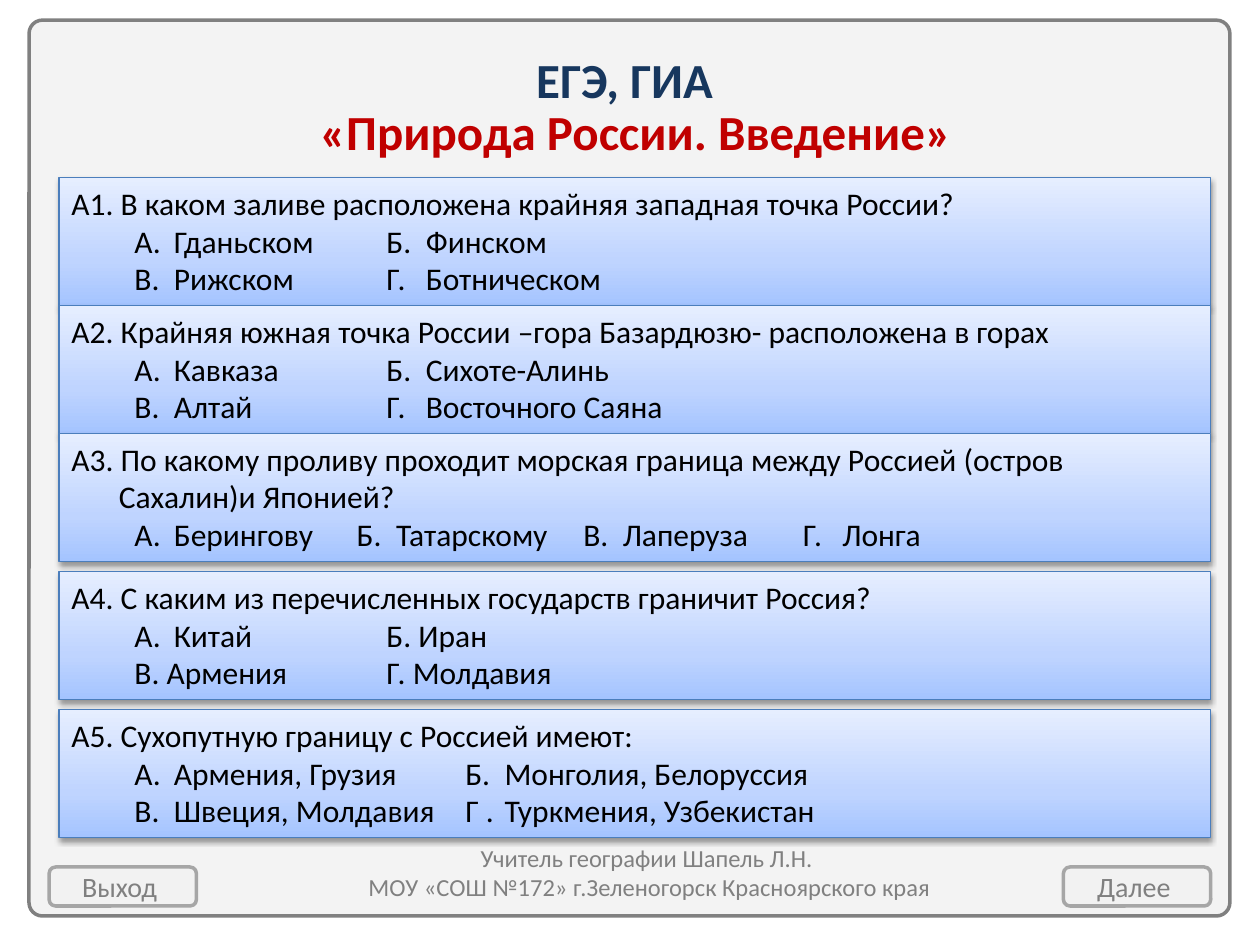
from lxml import etree
from pptx import Presentation
from pptx.dml.color import RGBColor
from pptx.enum.shapes import MSO_SHAPE
from pptx.enum.text import MSO_ANCHOR, MSO_AUTO_SIZE, PP_ALIGN
from pptx.oxml import parse_xml
from pptx.oxml.ns import nsdecls, qn
from pptx.util import Pt

RECTANGLE = MSO_SHAPE.RECTANGLE
ROUNDED = MSO_SHAPE.ROUNDED_RECTANGLE
CENTER = PP_ALIGN.CENTER
LEFT = PP_ALIGN.LEFT
TOP = MSO_ANCHOR.TOP
MIDDLE = MSO_ANCHOR.MIDDLE
FIT_SHAPE = MSO_AUTO_SIZE.SHAPE_TO_FIT_TEXT

COLORS = {
    "panel": "F2F2F2", "frame": "808080", "button_line": "A6A6A6",
    "muted": "808080", "heading": "17375E", "topic": "C00000",
    "text": "000000", "card_line": "4B7EBC", "shadow": "000000",
    "card_bottom": "A4C4FF", "card_middle": "BFD4FF", "card_top": "E6EEFF",
}
FONT = "Calibri"

TITLE = ["ЕГЭ, ГИА ", " «Природа России. Введение»"]
FOOTER = ["Учитель географии Шапель Л.Н. ",
          "МОУ «СОШ №172» г.Зеленогорск Красноярского края"]
BUTTONS = [("Выход ", 28.1), ("Далее ", 607.7)]
QUESTIONS = [
    {"text": "А1. В каком заливе расположена крайняя западная точка России?",
     "rows": [["А.\tГданьском", "Б.\tФинском"],
              ["В.\tРижском", "Г.\tБотническом"]],
     "columns": [180], "gap": 0},
    {"text": "А2. Крайняя южная точка России –гора Базардюзю- расположена в горах",
     "rows": [["А.\tКавказа", "Б.\tСихоте-Алинь"],
              ["В.\tАлтай", "Г.\tВосточного Саяна"]],
     "columns": [180], "gap": 0},
    {"text": "А3. По какому проливу проходит морская граница между Россией "
             "(остров Сахалин)и Японией?",
     "rows": [["А.\tБерингову", "Б.\tТатарскому", "В.\tЛаперуза", "Г.\tЛонга"]],
     "columns": [163, 292.5, 418], "gap": 0},
    {"text": "А4. С каким из перечисленных государств граничит Россия?",
     "rows": [["А.\tКитай", "Б. Иран"],
              ["В. Армения", "Г. Молдавия"]],
     "columns": [180], "gap": 5.8},
    {"text": "А5. Сухопутную границу с Россией имеют:",
     "rows": [["А.\tАрмения, Грузия", "Б.\tМонголия, Белоруссия"],
              ["В.\tШвеция, Молдавия", "Г .\tТуркмения, Узбекистан"]],
     "columns": [225], "gap": 5.8},
]
CARD_LEFT, CARD_TOP, CARD_WIDTH, CARD_HEIGHT = 33.8, 101.5, 658.1, 73.1
QUESTION_HANG, FIRST_COLUMN, ANSWER_OFFSET = 27, 36, 22.5


def color(name):
    return RGBColor.from_string(COLORS[name])


def format_font(font, size, color_name, bold=False):
    font.name = FONT
    font.size = Pt(size)
    font.bold = bold
    font.color.rgb = color(color_name)


def fill_text(shape, lines, size, color_name, align, anchor):
    frame = shape.text_frame
    frame.word_wrap = True
    frame.vertical_anchor = anchor
    frame.text = "\n".join(lines)
    for paragraph in frame.paragraphs:
        paragraph.alignment = align
        for run in paragraph.runs:
            format_font(run.font, size, color_name)
    return frame


def add_rounded(shapes, box, line_name):
    shape = shapes.add_shape(ROUNDED, *map(Pt, box))
    shape.shadow.inherit = False
    shape.fill.solid()
    shape.fill.fore_color.rgb = color("panel")
    fill_color = shape.element.spPr.find(qn("a:solidFill"))[0]
    etree.SubElement(fill_color, qn("a:alpha")).set("val", "90000")
    shape.line.color.rgb = color(line_name)
    shape.line.width = Pt(2)
    return shape


def style_card(card):
    stops = [(0, "card_bottom"), (35, "card_middle"), (100, "card_top")]
    stop_xml = "".join(
        f'<a:gs pos="{position * 1000}"><a:srgbClr val="{COLORS[name]}"/></a:gs>'
        for position, name in stops)
    properties = card.element.spPr
    properties.append(parse_xml(
        f'<a:gradFill {nsdecls("a")} rotWithShape="1"><a:gsLst>{stop_xml}</a:gsLst>'
        '<a:lin ang="16200000" scaled="1"/></a:gradFill>'))
    card.line.color.rgb = color("card_line")
    card.line.width = Pt(0.75)
    properties.append(parse_xml(
        f'<a:effectLst {nsdecls("a")}><a:outerShdw blurRad="{Pt(3.1)}" '
        f'dist="{Pt(1.6)}" dir="5400000" rotWithShape="0">'
        f'<a:srgbClr val="{COLORS["shadow"]}"><a:alpha val="38000"/></a:srgbClr>'
        '</a:outerShdw></a:effectLst>'))


def set_hanging(paragraph, hang):
    properties = paragraph._p.get_or_add_pPr()
    properties.set("marL", str(Pt(hang)))
    properties.set("indent", str(Pt(-hang)))


def set_tabs(paragraph, positions):
    properties = paragraph._p.get_or_add_pPr()
    properties.set("marL", "0")
    etree.SubElement(properties, qn("a:buNone"))
    tab_list = etree.SubElement(properties, qn("a:tabLst"))
    for position in positions:
        tab = etree.SubElement(tab_list, qn("a:tab"))
        tab.set("pos", str(Pt(position)))
        tab.set("algn", "l")


def add_question(shapes, question, top):
    card = shapes.add_shape(RECTANGLE, Pt(CARD_LEFT), Pt(top),
                            Pt(CARD_WIDTH), Pt(CARD_HEIGHT))
    style_card(card)
    answers = ["\t" + "\t".join(row) for row in question["rows"]]
    frame = fill_text(card, [question["text"]] + answers, 18, "text", LEFT, TOP)
    frame.auto_size = FIT_SHAPE
    tabs = []
    for column in [FIRST_COLUMN] + question["columns"]:
        tabs += [column, column + ANSWER_OFFSET]
    set_hanging(frame.paragraphs[0], QUESTION_HANG)
    for paragraph in frame.paragraphs[1:]:
        paragraph.level = 1
        set_tabs(paragraph, tabs)


def add_title(slide):
    title = slide.shapes.title
    slide.shapes.element.append(title.element)
    title.left, title.top, title.width, title.height = map(Pt, (22.3, 28.1, 675.4, 67.7))
    frame = fill_text(title, TITLE, 28, "heading", CENTER, TOP)
    frame.auto_size = FIT_SHAPE
    for paragraph, name in zip(frame.paragraphs, ("heading", "topic")):
        paragraph.line_spacing = Pt(30)
        paragraph.space_before = Pt(0)
        format_font(paragraph.runs[0].font, 28, name, bold=True)


def main():
    presentation = Presentation()
    presentation.slide_width, presentation.slide_height = Pt(720), Pt(540)
    slide = presentation.slides.add_slide(presentation.slide_layouts[5])
    shapes = slide.shapes

    panel = add_rounded(shapes, (16.6, 11.5, 686.2, 511.9), "frame")
    panel.adjustments[0] = 0.015
    for label, left in BUTTONS:
        button = add_rounded(shapes, (left, 495.4, 84.2, 22.3), "button_line")
        fill_text(button, [label], 16, "muted", CENTER, MIDDLE)

    footer = shapes.add_textbox(*map(Pt, (140.4, 478.1, 461.5, 41)))
    fill_text(footer, FOOTER, 14, "muted", CENTER, TOP).auto_size = FIT_SHAPE

    top = CARD_TOP
    for question in QUESTIONS:
        top += question["gap"]
        add_question(shapes, question, top)
        top += CARD_HEIGHT

    add_title(slide)
    presentation.save("out.pptx")


if __name__ == "__main__":
    main()
